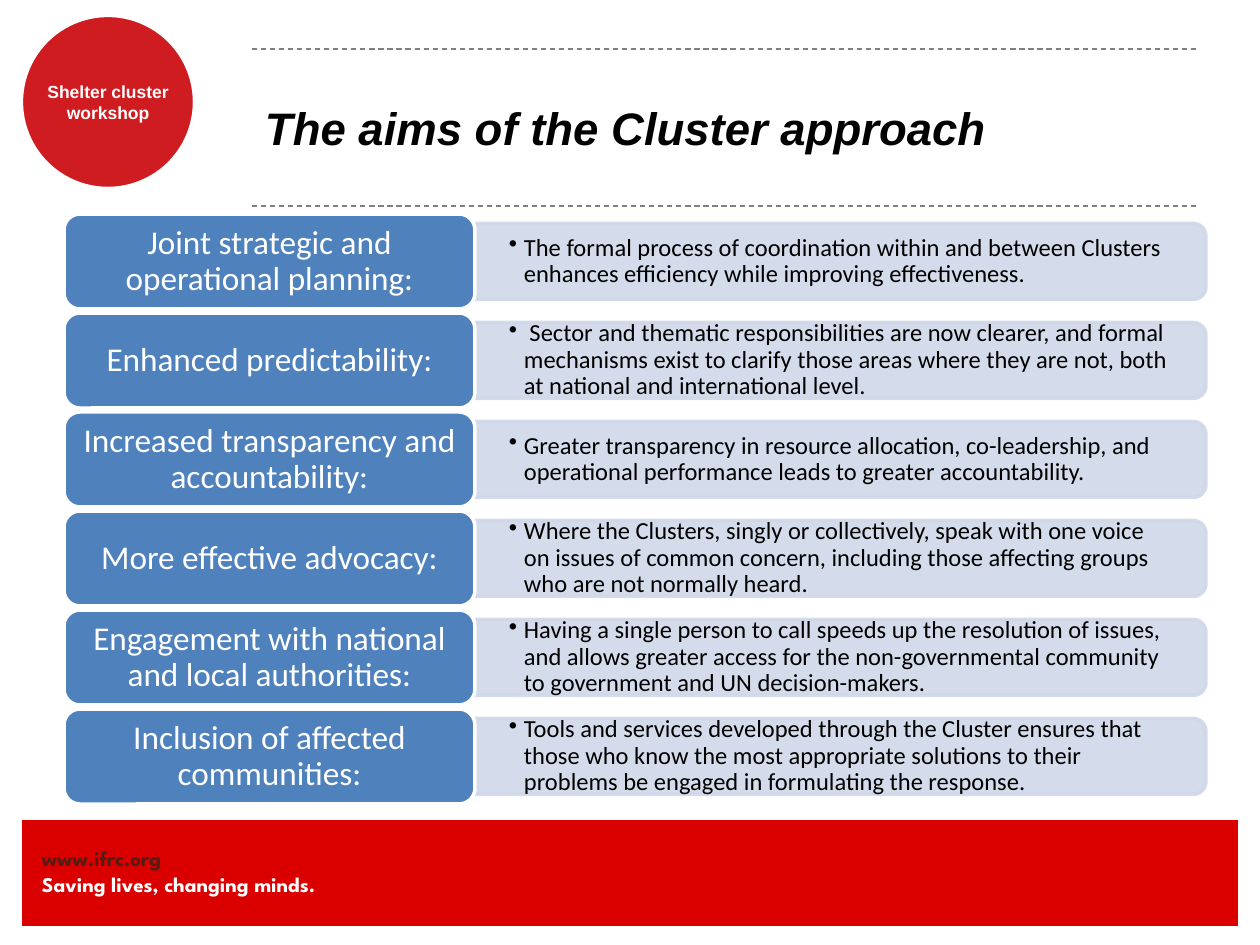
from lxml.etree import SubElement
from pptx import Presentation
from pptx.dml.color import RGBColor
from pptx.enum.dml import MSO_LINE
from pptx.enum.shapes import MSO_CONNECTOR, MSO_SHAPE as SHAPE
from pptx.enum.text import MSO_ANCHOR as ANCHOR, PP_ALIGN as ALIGN
from pptx.oxml.ns import qn
from pptx.util import Emu, Pt

PX = 914400 / 126
COLORS = {
    "band": "DB0000", "badge": "CF1C21", "label": "4F81BD", "tab": "D0D8E8",
    "rule": "808080", "address": "551C15", "white": "FFFFFF", "black": "000000",
}
AIMS = [
    ("Joint strategic and operational planning:",
     "The formal process of coordination within and between Clusters enhances "
     "efficiency while improving effectiveness."),
    ("Enhanced predictability:",
     " Sector and thematic responsibilities are now clearer, and formal mechanisms "
     "exist to clarify those areas where they are not, both at national and "
     "international level."),
    ("Increased transparency and accountability:",
     "Greater transparency in resource allocation, co-leadership, and operational "
     "performance leads to greater accountability."),
    ("More effective advocacy:",
     "Where the Clusters, singly or collectively, speak with one voice on issues of "
     "common concern, including those affecting groups who are not normally heard."),
    ("Engagement with national and local authorities:",
     "Having a single person to call speeds up the resolution of issues, and allows "
     "greater access for the non-governmental community to government and UN "
     "decision-makers."),
    ("Inclusion of affected communities:",
     "Tools and services developed through the Cluster ensures that those who know "
     "the most appropriate solutions to their problems be engaged in formulating "
     "the response."),
]

presentation = Presentation()
presentation.slide_width, presentation.slide_height = Emu(9144000), Emu(6858000)
slide = presentation.slides.add_slide(presentation.slide_layouts[5])


def add_panel(kind, box, fill, line, width):
    shape = slide.shapes.add_shape(kind, *(Emu(round(v * PX)) for v in box))
    shape.shadow.inherit = False
    shape.fill.solid()
    shape.fill.fore_color.rgb = RGBColor.from_string(COLORS[fill])
    shape.line.color.rgb = RGBColor.from_string(COLORS[line])
    shape.line.width = Pt(width)
    return shape


def write(shape, lines, insets, anchor, align, spacing=1.0, bullet=False, **style):
    """Fill a shape with (text, color) lines; insets are horizontal, vertical px."""
    frame = shape.text_frame
    across, down = (Emu(round(v * PX)) for v in insets)
    settings = {"word_wrap": True, "vertical_anchor": anchor,
                "margin_left": across, "margin_right": across,
                "margin_top": down, "margin_bottom": down}
    for name, value in settings.items():
        setattr(frame, name, value)
    for index, (text, color) in enumerate(lines):
        paragraph = frame.add_paragraph() if index else frame.paragraphs[0]
        paragraph.text = text
        paragraph.alignment, paragraph.line_spacing = align, spacing
        if bullet:
            properties = paragraph._p.get_or_add_pPr()
            properties.set("marL", str(round(15 * PX)))
            properties.set("indent", str(round(-15 * PX)))
            SubElement(properties, qn("a:buChar"), char="•")
        for name, value in style.items():
            setattr(paragraph.font, name, value)
        paragraph.font.color.rgb = RGBColor.from_string(COLORS[color])


# Footer band and badge
add_panel(SHAPE.RECTANGLE, (21, 819, 1218, 108), "band", "white", 0.75)
add_panel(SHAPE.OVAL, (21, 15, 174, 174), "badge", "white", 2.5)
footer = slide.shapes.add_textbox(*(Emu(round(v * PX)) for v in (42, 846, 431, 50)))
write(footer, [("www.ifrc.org", "address"), ("Saving lives, changing minds.", "white")],
      (0, 0), ANCHOR.TOP, ALIGN.LEFT, name="League Spartan", size=Pt(12), bold=True)
badge = slide.shapes.add_textbox(*(Emu(round(v * PX)) for v in (29, 81, 158, 43)))
write(badge, [("Shelter cluster workshop", "white")],
      (0, 0), ANCHOR.TOP, ALIGN.CENTER, name="Arial", size=Pt(10), bold=True)

# Dashed rules around the title
for y in (49, 206):
    rule = slide.shapes.add_connector(
        MSO_CONNECTOR.STRAIGHT, *(Emu(round(v * PX)) for v in (252, y, 1197, y)))
    rule.line.color.rgb = RGBColor.from_string(COLORS["rule"])
    rule.line.width, rule.line.dash_style = Pt(0.75), MSO_LINE.DASH
    SubElement(rule._element.spPr, qn("a:effectLst"))

# Title
title = slide.shapes.title
for name, value in {"left": 252, "top": 48, "width": 945, "height": 158}.items():
    setattr(title, name, Emu(round(value * PX)))
write(title, [("The aims of the Cluster approach", "black")], (13, 6), ANCHOR.MIDDLE,
      ALIGN.LEFT, name="Arial", size=Pt(26), bold=True, italic=True)

# Aims: a label on the left, its explanation on a tab to the right
TOP, PITCH, LABEL_HEIGHT = 214, 99, 95
TAB_LEFT, TAB_LENGTH, TAB_HEIGHT = 475, 731, 76
for row, (label, explanation) in enumerate(AIMS):
    top = TOP + row * PITCH
    middle = top + LABEL_HEIGHT / 2
    tab = add_panel(SHAPE.ROUND_2_SAME_RECTANGLE,
                    (TAB_LEFT + (TAB_LENGTH - TAB_HEIGHT) / 2, middle - TAB_LENGTH / 2,
                     TAB_HEIGHT, TAB_LENGTH), "tab", "tab", 2)
    tab.rotation = 90
    for color in tab._element.spPr.iter(qn("a:srgbClr")):
        SubElement(color, qn("a:alpha"), val="90000")
    detail = slide.shapes.add_textbox(
        *(Emu(round(v * PX)) for v in (TAB_LEFT, middle - 34, 727, 68)))
    write(detail, [(explanation, "black")], (34, 17), ANCHOR.MIDDLE, ALIGN.LEFT,
          spacing=0.9, bullet=True, name="Calibri", size=Pt(14))
    heading = add_panel(SHAPE.ROUNDED_RECTANGLE, (64, top, 411, LABEL_HEIGHT),
                        "label", "white", 2)
    write(heading, [(label, "white")], (10, 5), ANCHOR.MIDDLE, ALIGN.CENTER,
          spacing=0.9, name="Calibri", size=Pt(19))

presentation.save("out.pptx")
